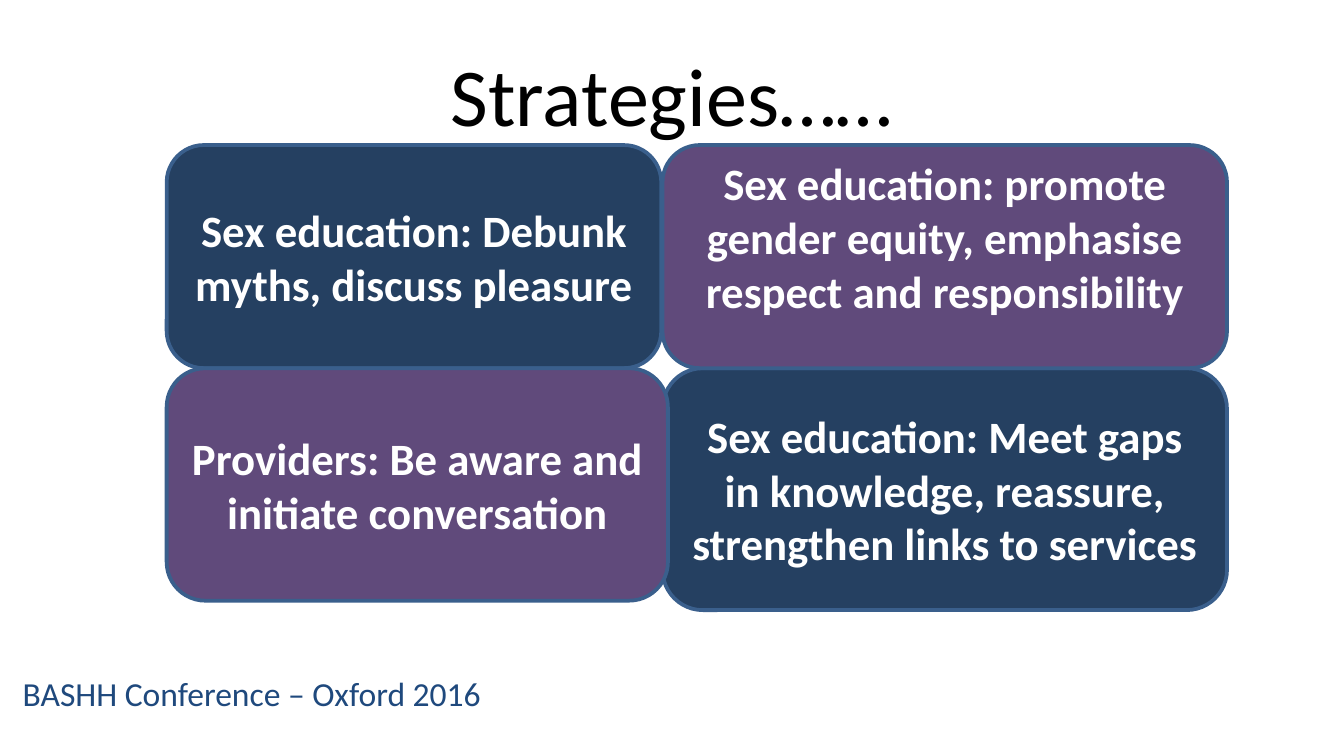
from pptx import Presentation, util as u
from pptx.dml.color import RGBColor
from pptx.enum import shapes, text

# Content
TITLE = "Strategies……"
FOOT = "BASHH Conference – Oxford 2016"
HUES = {"navy": "254061", "plum": "604A7B", "edge": "3A5F8C",
        "foot": "1F497D", "black": "000000", "white": "FFFFFF"}

# Cards, back to front: column, row, width, height, fill, foot inset, words
CARDS = [
    (0, 0, 3.68, 1.66, "navy", 0.05, "Sex education: Debunk myths, discuss pleasure"),
    (1, 1, 4.2, 1.8, "navy", 0.05,
     "Sex education: Meet gaps in knowledge, reassure, strengthen links to services"),
    (0, 1, 3.73, 1.73, "plum", 0.05, "Providers: Be aware and initiate conversation"),
    (1, 0, 4.2, 1.66, "plum", 0.35,
     "Sex education: promote gender equity, emphasise respect and responsibility"),
]
COLS = (1.24, 4.93)
ROWS = (1.08, 2.74)
WIDE = 10
HIGH = WIDE * 9 / 16


def hue(name):
    return RGBColor.from_string(HUES[name])


def write(shape, words, size, color, bold=False, center=True, middle=True):
    frame = shape.text_frame
    frame.word_wrap = True
    frame.vertical_anchor = text.MSO_ANCHOR.MIDDLE if middle else text.MSO_ANCHOR.TOP
    para = frame.paragraphs[0]
    para.text = words
    para.alignment = text.PP_ALIGN.CENTER if center else text.PP_ALIGN.LEFT
    font = para.font
    font.name, font.size, font.bold = "Calibri", u.Pt(size), bold
    font.color.rgb = hue(color)
    return frame


def box(*area):
    return [u.Inches(n) for n in area]


deck = Presentation()
deck.slide_width, deck.slide_height = box(WIDE, HIGH)
page = deck.slides.add_slide(deck.slide_layouts[6]).shapes

# Footer and title
write(page.add_textbox(*box(0.07, 4.96, 4.78, 0.69)), FOOT, 18, "foot",
      center=False, middle=False)
write(page.add_textbox(*box(0.5, 0.23, 9, 0.94)), TITLE, 44, "black")

# Strategy cards
for col, row, wide, high, fill, inset, words in CARDS:
    card = page.add_shape(shapes.MSO_SHAPE.ROUNDED_RECTANGLE,
                          *box(COLS[col], ROWS[row], wide, high))
    card.shadow.inherit = False
    card.fill.solid()
    card.fill.fore_color.rgb = hue(fill)
    card.line.color.rgb = hue("edge")
    card.line.width = u.Pt(2)
    frame = write(card, words, 24, "white", bold=True)
    frame.margin_bottom = u.Inches(inset)

deck.save("out.pptx")
